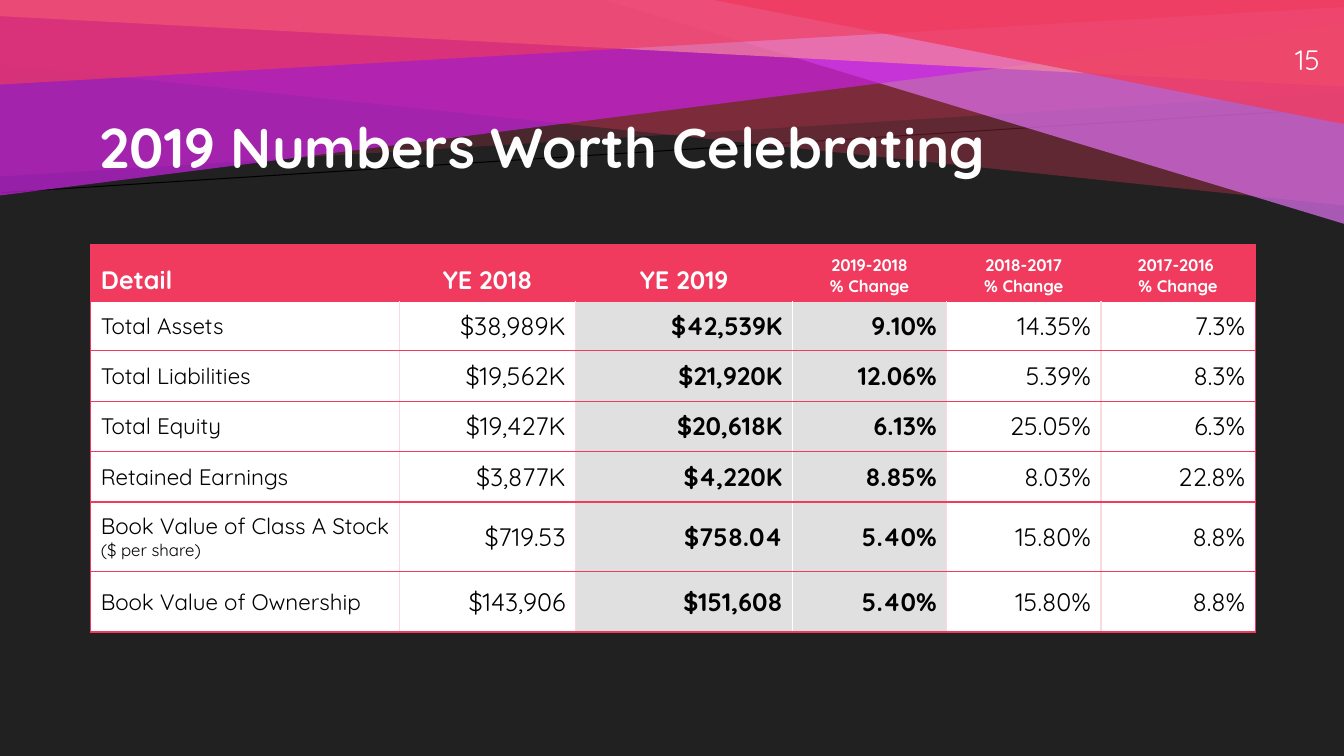
from lxml.etree import SubElement
from pptx import Presentation
from pptx.dml.color import RGBColor
from pptx.enum.shapes import MSO_CONNECTOR, MSO_SHAPE
from pptx.enum.text import MSO_ANCHOR, PP_ALIGN
from pptx.oxml import parse_xml
from pptx.oxml.ns import nsdecls, qn
from pptx.util import Inches, Pt

W, H = 13.33, 7.5
RED, PALE, WHITE, BLACK, GREY = "F03B5E", "FCD8DF", "FFFFFF", "000000", "E0E0E0"
rgb = RGBColor.from_string


def paint(shape, color, opacity):
    """Fill a background shape with a see-through colour, without outline or shadow."""
    shape.shadow.inherit = False
    shape.line.fill.background()
    shape.fill.solid()
    shape.fill.fore_color.rgb = rgb(color)
    srgb = shape.fill._xPr.find(".//" + qn("a:srgbClr"))
    SubElement(srgb, qn("a:alpha"), val=str(opacity * 1000))


def write(p, text, size=18, color=BLACK, bold=False, align=PP_ALIGN.LEFT):
    """Add text to a paragraph, with a line break at each newline; return the last run."""
    p.alignment = align
    for i, line in enumerate(text.split("\n")):
        if i:
            p.add_line_break()
        r = p.add_run()
        r.text = line
        r.font.name, r.font.size, r.font.bold = "Quicksand", Pt(size), bold
        r.font.color.rgb = rgb(color)
    return r


prs = Presentation()
prs.slide_width, prs.slide_height = Inches(W), Inches(H)
s = prs.slides.add_slide(prs.slide_layouts[5])
s.background.fill.solid()
s.background.fill.fore_color.rgb = rgb("212121")

# Background: a thin line under overlapping translucent bands
line = s.shapes.add_connector(MSO_CONNECTOR.STRAIGHT, Inches(0.02), Inches(1.91), Inches(W), Inches(1.07))
line.line.color.rgb = rgb(BLACK)
line.line.width = Pt(0.75)
SubElement(line._element.spPr, qn("a:effectLst"))

# Bands hang from the top edge: depth at the left, depth at the right, colour, opacity.
# Without a left depth the band is a triangle; its width follows instead.
bands = [
    (0.64, 2.04, RED, 30, None),
    (1.75, 0.92, RED, 20, None),
    (None, 2.24, "DC6FEC", 72, 7.4),
    (1.94, 0.24, "C922E2", 70, None),
    (0.16, 0.86, "F6899E", 70, None),
    (0.84, 0.07, RED, 65, None),
    (None, 1.25, RED, 80, 6.35),
]
top = -0.02
for left, right, color, opacity, width in bands:
    if left is None:
        # Turned a quarter to the left, so width and height trade places
        cx, cy = W - width / 2, top + right / 2
        band = s.shapes.add_shape(MSO_SHAPE.ISOSCELES_TRIANGLE, Inches(cx - right / 2),
                                  Inches(cy - width / 2), Inches(right), Inches(width))
        band.adjustments[0] = 1
        band.rotation = 270
    else:
        outline = s.shapes.build_freeform(0, Inches(left), scale=1.0)
        corners = [(0, top), (W, top), (W, right)]
        outline.add_line_segments([(Inches(x), Inches(y)) for x, y in corners])
        band = outline.convert_to_shape()
    paint(band, color, opacity)

# Table
header = ["Detail", "YE 2018", "YE 2019", "2019-2018\n% Change", "2018-2017\n% Change", "2017-2016 \n% Change"]
body = [
    ["Total Assets", "$38,989K", "$42,539K", "9.10%", "14.35%", "7.3%"],
    ["Total Liabilities", "$19,562K", "$21,920K", "12.06%", "5.39%", "8.3%"],
    ["Total Equity", "$19,427K", "$20,618K", "6.13%", "25.05%", "6.3%"],
    ["Retained Earnings", "$3,877K", "$4,220K", "8.85%", "8.03%", "22.8%"],
    ["Book Value of Class A Stock ", "$719.53", "$758.04", "5.40%", "15.80%", "8.8%"],
    ["Book Value of Ownership", "$143,906", "$151,608", "5.40%", "15.80%", "8.8%"],
]
widths = [3.06, 1.75, 2.15, 1.53, 1.53, 1.53]
heights = [0.56, 0.49, 0.5, 0.5, 0.5, 0.69, 0.6]
body_edges = [RED, PALE, PALE, WHITE, PALE, PALE, RED]
table = s.shapes.add_table(len(heights), len(widths), Inches(0.9), Inches(2.43),
                           Inches(sum(widths)), Inches(sum(heights))).table
for column, width in zip(table.columns, widths):
    column.width = Inches(width)
for row, height in zip(table.rows, heights):
    row.height = Inches(height)

for i, values in enumerate([header] + body):
    for j, text in enumerate(values):
        cell = table.cell(i, j)
        p = cell.text_frame.paragraphs[0]
        current = j in (2, 3)
        if i == 0:
            fill, edges = RED, [RED] * len(body_edges)
            cell.vertical_anchor = MSO_ANCHOR.BOTTOM
            write(p, text, size=18 if j < 3 else 12, color=WHITE, bold=True,
                  align=PP_ALIGN.CENTER if j else PP_ALIGN.LEFT)
        else:
            fill, edges = GREY if current else WHITE, body_edges
            cell.vertical_anchor = MSO_ANCHOR.MIDDLE
            write(p, text, size=18 if j else 16, bold=current,
                  align=PP_ALIGN.RIGHT if j else PP_ALIGN.LEFT)
        cell.fill.solid()
        cell.fill.fore_color.rgb = rgb(fill)
        sides = [("L", edges[j]), ("R", edges[j + 1]), ("T", RED), ("B", RED)]
        for k, (side, color) in enumerate(sides):
            cell._tc.tcPr.insert(k, parse_xml(
                f'<a:ln{side} {nsdecls("a")} w="{Pt(1)}"><a:solidFill>'
                f'<a:srgbClr val="{color}"/></a:solidFill></a:ln{side}>'))
write(table.cell(5, 0).text_frame.paragraphs[0], "($ per share)", size=12)

# Slide number
number = s.shapes.add_textbox(Inches(12.03), Inches(0.22), Inches(1.16), Inches(0.54))
tf = number.text_frame
tf.word_wrap = True
tf.vertical_anchor = MSO_ANCHOR.BOTTOM
tf.margin_bottom = Inches(0.01)
write(tf.paragraphs[0], "15", size=20, color=WHITE, align=PP_ALIGN.RIGHT)

# Title, brought in front of the bands
title = s.shapes.title
title.left, title.top, title.width, title.height = Inches(0.89), Inches(0.77), Inches(11.56), Inches(1.06)
title.text_frame.vertical_anchor = MSO_ANCHOR.BOTTOM
r = write(title.text_frame.paragraphs[0], "2019 Numbers Worth Celebrating", size=40, color="FEFEFE", bold=True)
r.font._element.find(qn("a:solidFill")).addnext(parse_xml(
    f'<a:effectLst {nsdecls("a")}><a:outerShdw blurRad="38100" dist="38100" dir="2700000">'
    f'<a:srgbClr val="{BLACK}"><a:alpha val="50000"/></a:srgbClr></a:outerShdw></a:effectLst>'))
title._element.getparent().append(title._element)

prs.save("out.pptx")
